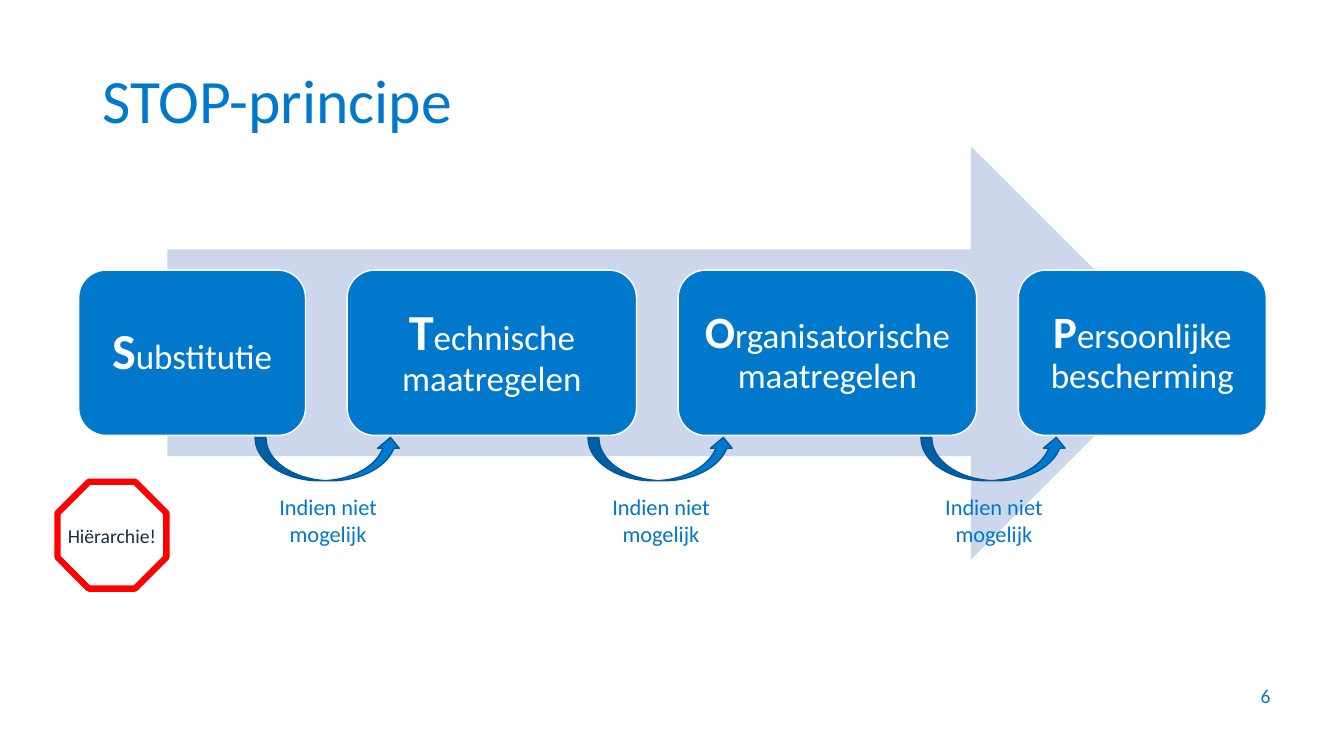
from pptx import Presentation
from pptx.dml.color import RGBColor
from pptx.enum.shapes import MSO_SHAPE
from pptx.enum.text import MSO_ANCHOR, MSO_AUTO_SIZE, PP_ALIGN
from pptx.util import Inches, Pt

BLUE, WHITE = "0079CC", "FFFFFF"


def color(code):
    return RGBColor.from_string(code)


def assign(target, values):
    for name, value in values.items():
        setattr(target, name, value)


class SlideBuilder:
    font_name = "Calibri"

    def __init__(self, deck):
        self.deck = deck
        self.slide = deck.slides.add_slide(deck.slide_layouts[5])

    def area(self, left, top, width, height):
        across, down = self.deck.slide_width / 100, self.deck.slide_height / 100
        return [int(left * across), int(top * down), int(width * across), int(height * down)]

    def fill_text(self, box, spans, ink=BLUE, align=PP_ALIGN.CENTER,
                  anchor=MSO_ANCHOR.MIDDLE, spacing=1.0, **frame_format):
        frame = box.text_frame
        assign(frame, {"word_wrap": True, "auto_size": MSO_AUTO_SIZE.NONE,
                       "vertical_anchor": anchor, **frame_format})
        para = frame.paragraphs[0]
        assign(para, {"alignment": align, "line_spacing": spacing})
        for text, size, bold in spans:
            span = para.add_run()
            span.text = text
            assign(span.font, {"name": self.font_name, "size": Pt(size), "bold": bold})
            span.font.color.rgb = color(ink)

    def title(self, place, text, size):
        box = self.slide.shapes.title
        assign(box, dict(zip(("left", "top", "width", "height"), self.area(*place))))
        self.fill_text(box, [(text, size, False)], align=PP_ALIGN.LEFT, spacing=0.9)

    def text(self, place, text, size, **style):
        box = self.slide.shapes.add_textbox(*self.area(*place))
        self.fill_text(box, [(text, size, False)], **style)

    def shape(self, kind, place, fill, line=None, weight=1):
        shape = self.slide.shapes.add_shape(kind, *self.area(*place))
        shape.shadow.inherit = False
        shape.fill.solid()
        shape.fill.fore_color.rgb = color(fill)
        if line:
            shape.line.color.rgb = color(line)
            shape.line.width = Pt(weight)
        else:
            shape.line.fill.background()
        return shape

    def step(self, place, initial, rest, initial_size, margin):
        box = self.shape(MSO_SHAPE.ROUNDED_RECTANGLE, place, BLUE, WHITE)
        sides = ("margin_left", "margin_top", "margin_right", "margin_bottom")
        self.fill_text(box, [(initial, initial_size, True), (rest, 25, False)], ink=WHITE,
                       spacing=0.9, **dict.fromkeys(sides, Inches(margin)))

    def sign(self, place, text):
        box = self.shape(MSO_SHAPE.OCTAGON, place, WHITE, "FF0000", 4.5)
        self.fill_text(box, [(text, 14, False)], ink="152E47", word_wrap=False,
                       margin_left=0, margin_right=0)


def main():
    deck = Presentation()
    assign(deck, {"slide_width": Inches(13.33), "slide_height": Inches(7.5)})
    page = SlideBuilder(deck)
    page.title((6.9, 4, 75.6, 19.33), "STOP-principe", 44)
    page.text((72.77, 89.33, 22.5, 5.33), "6", 14, align=PP_ALIGN.RIGHT)
    page.shape(MSO_SHAPE.RIGHT_ARROW, (12.45, 19.33, 75.17, 54.67), "CCD7EC")

    steps = [
        ("S", "ubstitutie", 36, 0.15, 16.88),
        ("T", "echnische maatregelen", 36, 0.15, 21.53),
        ("O", "rganisatorische maatregelen", 32, 0.13, 22.21),
        ("P", "ersoonlijke bescherming", 32, 0.13, 18.45),
    ]
    left, gap = 5.85, 3.1
    for initial, rest, size, margin, width in steps:
        page.step((left, 35.73, width, 21.87), initial, rest, size, margin)
        left += width + gap

    for index in range(len(steps) - 1):
        offset = index * 24.77
        page.text((19.95 + offset, 64.53, 8.93, 8.53), "Indien niet mogelijk", 16,
                  anchor=MSO_ANCHOR.TOP)
        page.shape(MSO_SHAPE.CURVED_UP_ARROW, (18.98 + offset, 57.87, 10.88, 5.73),
                   BLUE, "005A97")

    page.sign((4.28, 63.73, 8.1, 14.13), "Hiërarchie!")
    deck.save("out.pptx")


if __name__ == "__main__":
    main()
